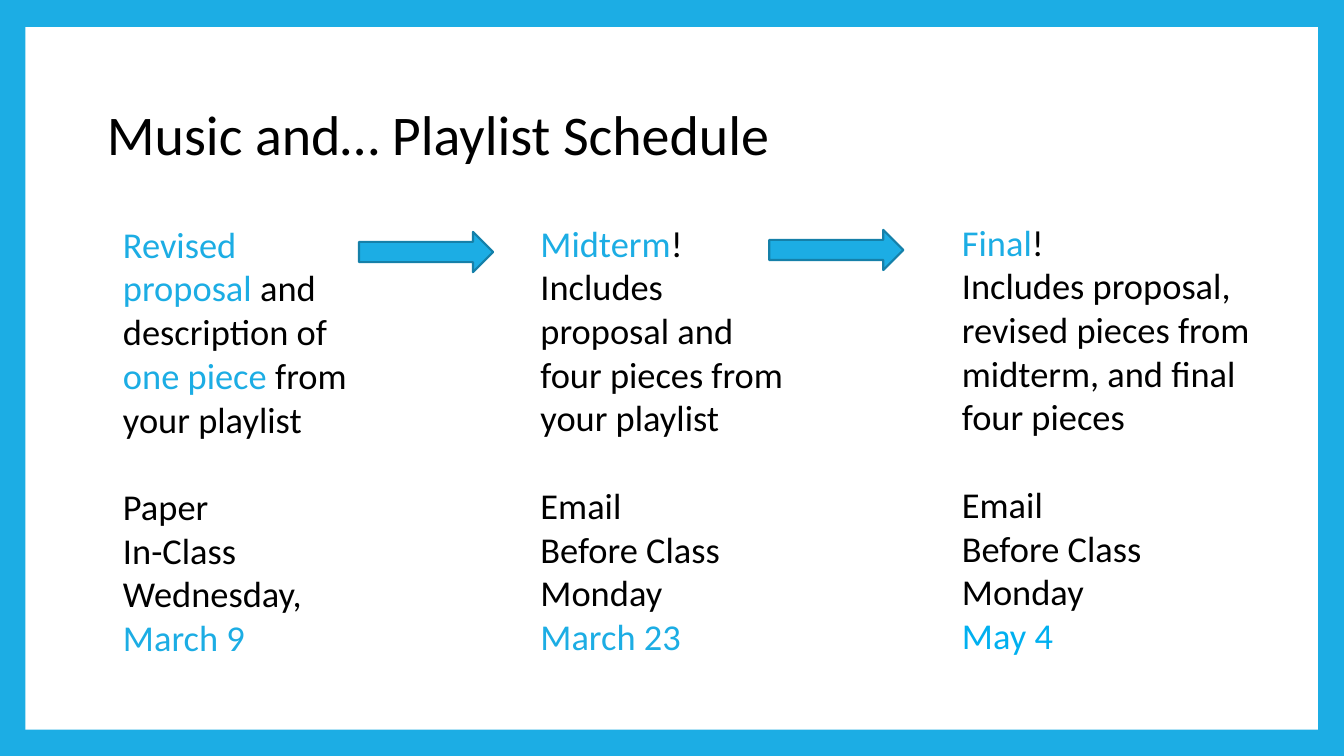
import dataclasses
import pptx
import pptx.dml.color
import pptx.enum.shapes
import pptx.enum.text
import pptx.oxml.ns
import pptx.util
import lxml.etree

WIDE, HIGH = 13.33, 7.5
BLUE, EDGE, SKY = "1CADE4", "1580A9", "00B0F0"
BLACK, WHITE = "000000", "FFFFFF"
FONT, SIZE, GAP = "Calibri", 26, 31.2
SHAPE = pptx.enum.shapes.MSO_SHAPE


@dataclasses.dataclass
class Box:
    """Place and size in percent of the slide."""
    left: float
    top: float
    width: float
    height: float


@dataclasses.dataclass
class Step:
    """One column: what is due, then how and when."""
    box: Box
    task: list
    due: list


FRAME = Box(1.88, 3.6, 96.17, 92.93)
TITLE = Box(7.2, 12.53, 94.9, 10.27)
ARROWS = [Box(26.71, 30.67, 9.98, 5.33), Box(57.24, 30.4, 9.98, 5.33)]
STEPS = [
    Step(Box(8.4, 28.67, 18.68, 67.33),
         [[("Revised proposal ", BLUE), ("and description of ", BLACK),
           ("one piece ", BLUE), ("from your playlist", BLACK)]],
         [[("Paper", BLACK)],
          [("In-Class Wednesday, ", BLACK), ("March 9", BLUE)]]),
    Step(Box(39.46, 28.53, 20.78, 67.33),
         [[("Midterm", BLUE),
           ("! Includes proposal and four pieces from your playlist", BLACK)]],
         [[("Email", BLACK)], [("Before Class Monday", BLACK)],
          [("March 23", BLUE)]]),
    Step(Box(70.82, 28.4, 24.08, 67.33),
         [[("Final", BLUE), ("!", BLACK)],
          [("Includes proposal, revised pieces from midterm, and final four pieces",
            BLACK)]],
         [[("Email", BLACK)], [("Before Class", BLACK)], [("Monday", BLACK)],
          [("May 4", SKY)]]),
]


def color(code: str) -> pptx.dml.color.RGBColor:
    """Turn a hex string into a colour."""
    return pptx.dml.color.RGBColor.from_string(code)


def spot(box: Box) -> list:
    """Turn shares of the slide into lengths."""
    return [pptx.util.Inches(part * side / 100) for part, side in
            zip(dataclasses.astuple(box), (WIDE, HIGH, WIDE, HIGH))]


def move(shape, box: Box) -> None:
    """Put a placeholder at a box."""
    shape.left, shape.top, shape.width, shape.height = spot(box)


def style(run, size: float, code: str) -> None:
    """Format one run."""
    run.font.name, run.font.size, run.font.bold = FONT, pptx.util.Pt(size), False
    run.font.color.rgb = color(code)


def draw(slide, kind, box: Box, fill: str, edge: str = ""):
    """Add a flat shape, with an outline if an edge is given."""
    shape = slide.shapes.add_shape(kind, *spot(box))
    shape.shadow.inherit = False
    shape.fill.solid()
    shape.fill.fore_color.rgb = color(fill)
    if edge:
        shape.line.color.rgb = color(edge)
        shape.line.width = pptx.util.Pt(1.5)
    else:
        shape.line.fill.background()
    return shape


def head(shape) -> None:
    """Write the title."""
    move(shape, TITLE)
    frame = shape.text_frame
    frame.text = "Music and… Playlist Schedule"
    frame.vertical_anchor = pptx.enum.text.MSO_ANCHOR.MIDDLE
    line = frame.paragraphs[0]
    line.alignment = pptx.enum.text.PP_ALIGN.LEFT
    style(line.runs[0], 40, BLACK)


def fill(shape, step: Step) -> None:
    """Write one column of the schedule."""
    move(shape, step.box)
    frame = shape.text_frame
    frame.word_wrap = True
    frame.auto_size = pptx.enum.text.MSO_AUTO_SIZE.NONE
    frame.vertical_anchor = pptx.enum.text.MSO_ANCHOR.TOP
    for spot_no, parts in enumerate(step.task + step.due):
        line = frame.add_paragraph() if spot_no else frame.paragraphs[0]
        first = spot_no == len(step.task)
        line.space_before = pptx.util.Pt(GAP if first else 0)
        line.line_spacing = pptx.util.Pt(GAP)
        props = line._p.get_or_add_pPr()
        props.set("marL", "0")
        props.set("indent", "0")
        lxml.etree.SubElement(props, pptx.oxml.ns.qn("a:buNone"))
        for text, code in parts:
            run = line.add_run()
            run.text = text
            style(run, SIZE, code)


def main() -> None:
    """Build the slide and save it."""
    deck = pptx.Presentation()
    deck.slide_width = pptx.util.Inches(WIDE)
    deck.slide_height = pptx.util.Inches(HIGH)
    slide = deck.slides.add_slide(deck.slide_layouts.get_by_name("Comparison"))
    slide.background.fill.solid()
    slide.background.fill.fore_color.rgb = color(BLUE)
    title, *bodies = slide.placeholders
    panel = draw(slide, SHAPE.RECTANGLE, FRAME, WHITE)
    title.element.addprevious(panel.element)
    head(title)
    for body, step in zip(bodies, STEPS):
        fill(body, step)
    for spare in bodies[len(STEPS):]:
        spare.element.getparent().remove(spare.element)
    for box in ARROWS:
        draw(slide, SHAPE.RIGHT_ARROW, box, BLUE, EDGE)
    deck.save("out.pptx")


if __name__ == "__main__":
    main()
